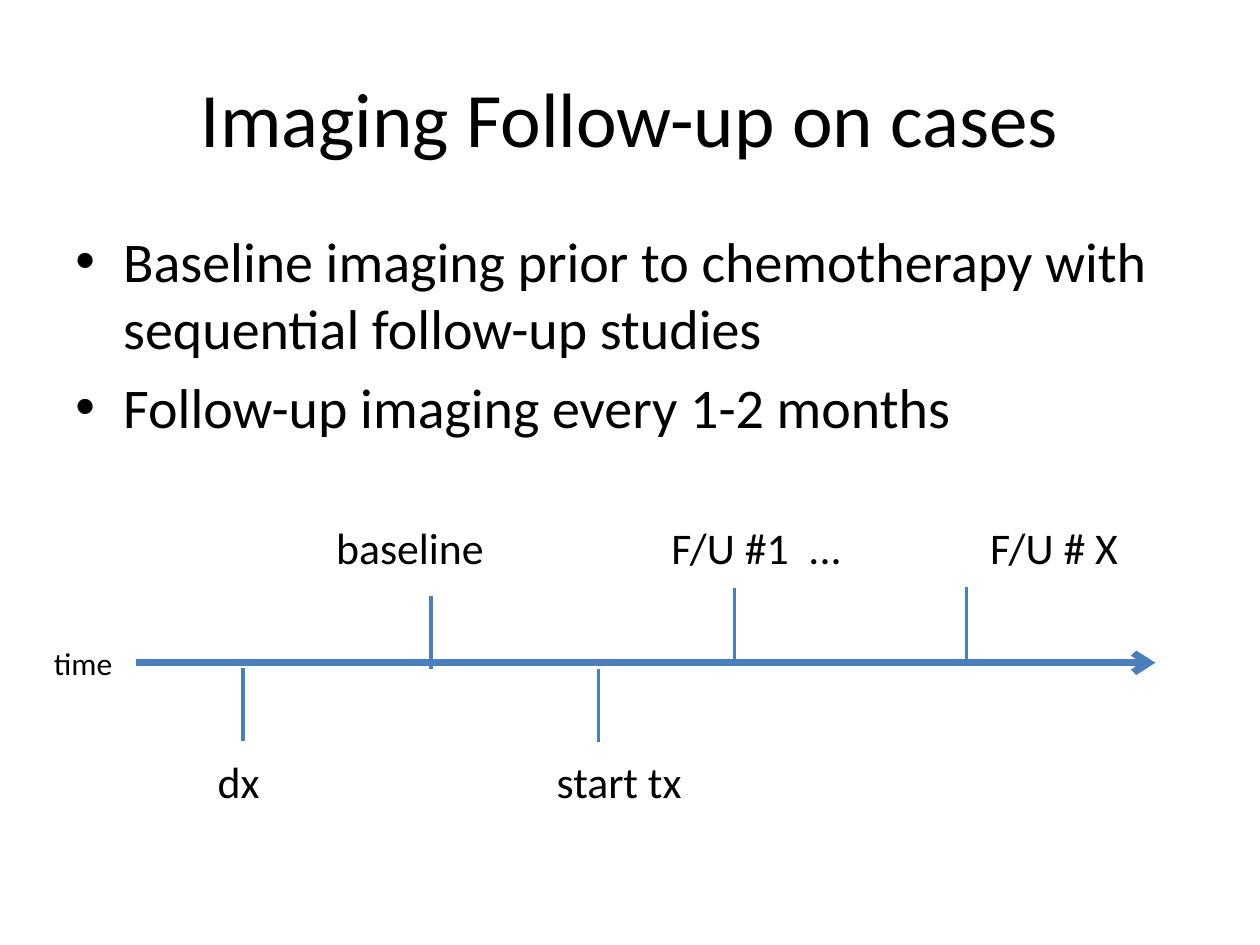
"""Build a slide on imaging follow-up with a treatment timeline."""
from lxml import etree
from pptx import Presentation
from pptx.dml.color import RGBColor
from pptx.enum.shapes import MSO_CONNECTOR
from pptx.enum.text import MSO_ANCHOR, PP_ALIGN
from pptx.oxml.ns import qn
from pptx.util import Inches, Pt

STRAIGHT = MSO_CONNECTOR.STRAIGHT
MIDDLE = MSO_ANCHOR.MIDDLE
TOP = MSO_ANCHOR.TOP
CENTER = PP_ALIGN.CENTER
LEFT = PP_ALIGN.LEFT

BLACK = RGBColor(0x00, 0x00, 0x00)
BLUE = RGBColor(0x4B, 0x7E, 0xBC)
FONT = "Calibri"

AXIS_Y = 5.26
TICK_LENGTH = 0.58
ABOVE_LABEL_TOP = 4.08
BELOW_LABEL_TOP = 5.94

BULLETS = [
    "Baseline imaging prior to chemotherapy with sequential follow-up studies",
    "Follow-up imaging every 1-2 months",
]
TICKS = [(1.93, 5.3), (3.42, 4.73), (4.75, 5.31), (5.83, 4.67), (7.67, 4.66)]
LABELS = [
    ("baseline", 2.57, ABOVE_LABEL_TOP, 1.4),
    ("F/U #1  ...", 5.23, ABOVE_LABEL_TOP, 1.6),
    ("F/U # X", 7.76, ABOVE_LABEL_TOP, 1.3),
    ("dx", 1.63, BELOW_LABEL_TOP, 0.6),
    ("start tx", 4.32, BELOW_LABEL_TOP, 1.3),
]


def add_text(slide, lines, left, top, width, height, size, align=LEFT, anchor=TOP):
    """Add a text box with one paragraph per line and return its text frame."""
    box = slide.shapes.add_textbox(
        Inches(left), Inches(top), Inches(width), Inches(height))
    frame = box.text_frame
    frame.word_wrap = True
    frame.vertical_anchor = anchor
    frame.text = "\n".join(lines)
    for paragraph in frame.paragraphs:
        paragraph.alignment = align
        for run in paragraph.runs:
            run.font.name = FONT
            run.font.size = Pt(size)
            run.font.color.rgb = BLACK
    return frame


def add_bullets(slide, lines, left, top, width, height, size):
    """Add a bulleted list with hanging indents."""
    frame = add_text(slide, lines, left, top, width, height, size)
    for paragraph in frame.paragraphs:
        paragraph.space_before = Pt(size * 0.2)
        properties = paragraph._p.get_or_add_pPr()
        properties.set("marL", str(Inches(0.38)))
        properties.set("indent", str(Inches(-0.38)))
        etree.SubElement(properties, qn("a:buFont"), typeface="Arial")
        etree.SubElement(properties, qn("a:buChar"), char="•")


def add_line(slide, x1, y1, x2, y2, weight):
    """Add a straight blue line without a shadow and return it."""
    line = slide.shapes.add_connector(
        STRAIGHT, Inches(x1), Inches(y1), Inches(x2), Inches(y2))
    line.line.color.rgb = BLUE
    line.line.width = Pt(weight)
    etree.SubElement(line._element.spPr, qn("a:effectLst"))
    return line


def add_time_axis(slide):
    """Add the time arrow with its caption."""
    axis = add_line(slide, 1.08, AXIS_Y, 9.17, AXIS_Y, 4)
    etree.SubElement(axis.line._get_or_add_ln(), qn("a:tailEnd"), type="arrow")
    add_text(slide, ["time"], 0.33, 5.06, 0.75, 0.4, 18)


def main():
    """Build and save the slide."""
    presentation = Presentation()
    presentation.slide_width = Inches(10)
    presentation.slide_height = Inches(7.5)
    slide = presentation.slides.add_slide(presentation.slide_layouts[6])

    add_text(slide, ["Imaging Follow-up on cases"], 0.5, 0.3, 9, 1.25, 44, CENTER, MIDDLE)
    add_time_axis(slide)
    for x, top in TICKS:
        add_line(slide, x, top + TICK_LENGTH, x, top, 2)
    for label, left, top, width in LABELS:
        add_text(slide, [label], left, top, width, 0.52, 25)
    add_bullets(slide, BULLETS, 0.5, 1.75, 9, 2.2, 32)

    presentation.save("out.pptx")


if __name__ == "__main__":
    main()
